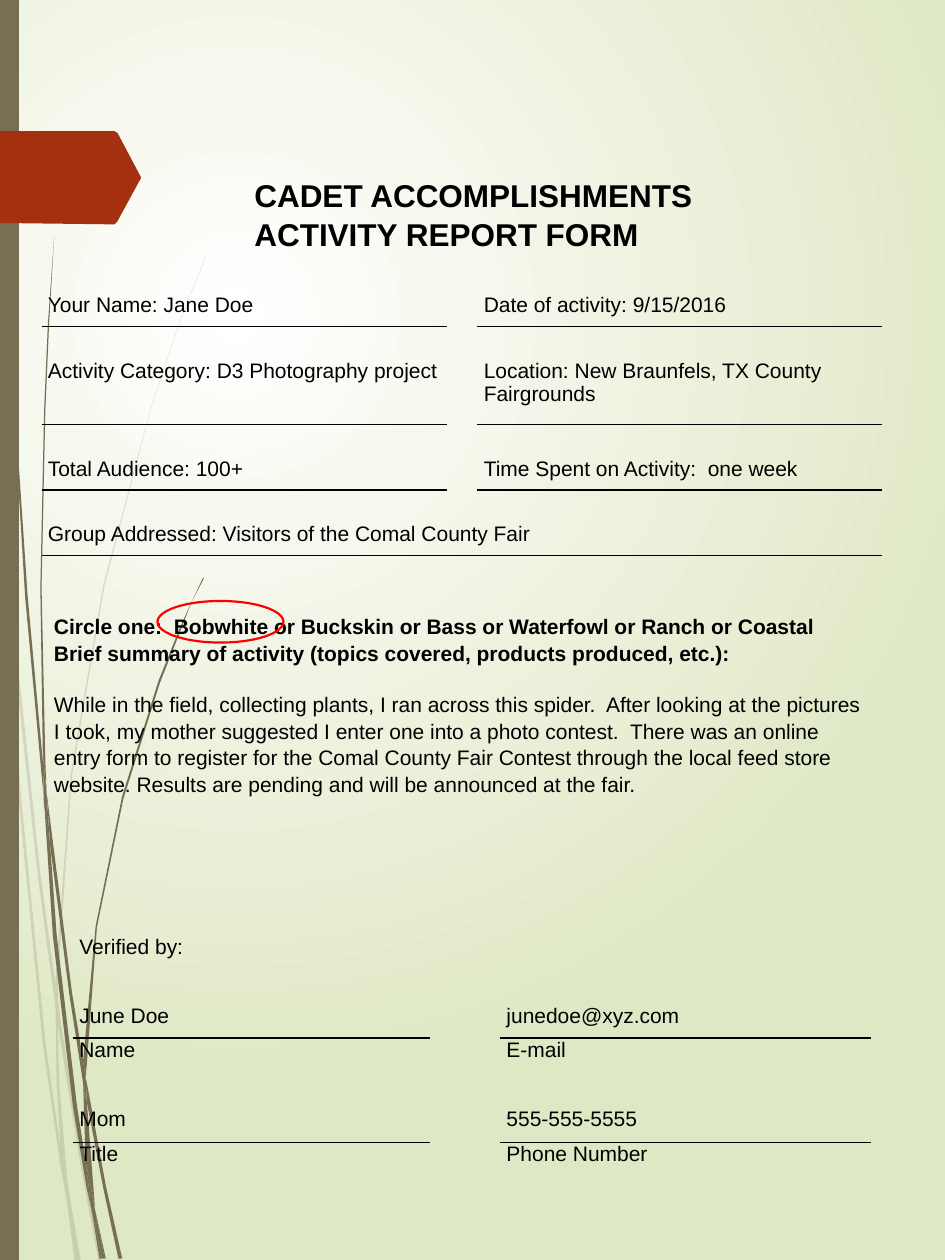
import pptx
import pptx.util
import pptx.dml.color
import pptx.enum.shapes
import pptx.enum.text
import pptx.oxml
import pptx.oxml.ns
from dataclasses import dataclass
from lxml import etree

PX = 9144
NO_STYLE = "{2D5ABB26-0587-4C30-8999-92F81FD0307C}"


@dataclass(frozen=True)
class Theme:
    font: str = "Arial"
    ink: str = "000000"
    stem: str = "766F54"
    tag: str = "A53010"
    ring: str = "FF0000"
    glow: str = "FFFFFF"
    leaf: str = "DFE8C4"
    body: int = 12
    title: int = 18
    spacing: float = 1.05
    rule: float = 1
    ring_line: float = 1.25


FAINT_WISPS = [
    [(6, 467), (4, 429), (0, 375), (0, 399), (5, 459)],
    [(30, 695), (44, 799), (44, 781), (32, 693), (7, 460), (9, 501)],
    [(48, 809), (46, 794), (46, 814), (64, 925), (78, 1000), (81, 1000), (66, 922)],
    [(62, 1000), (64, 1000), (55, 948)],
    [(48, 910), (36, 826), (16, 625), (9, 501), (6, 467), (14, 626), (34, 828),
     (48, 925), (53, 952), (52, 943)],
    [(4, 421), (4, 429), (7, 458), (7, 460), (6, 421), (3, 214), (5, 33), (4, 33), (2, 214)],
    [(44, 799), (45, 861), (48, 911), (50, 923), (55, 948), (54, 942), (47, 861),
     (46, 814), (46, 811)],
    [(46, 778), (57, 616), (83, 465), (119, 327), (140, 264), (151, 234), (163, 205),
     (163, 204), (151, 233), (140, 263), (119, 326), (82, 464), (56, 615), (44, 778),
     (44, 781), (46, 794)],
    [(53, 952), (59, 1000), (62, 1000)],
    [(46, 811), (46, 814), (46, 794), (44, 781), (44, 799)],
    [(50, 923), (48, 911), (52, 943), (53, 952), (62, 1000), (55, 948)],
]
DARK_WISPS = [
    [(4, 147), (10, 310), (20, 474), (35, 636), (35, 642), (34, 610), (34, 604), (22, 473),
     (11, 310), (5, 146), (3, 64), (2, 0), (2, 64)],
    [(55, 789), (66, 860), (66, 845), (66, 842), (57, 787), (37, 629), (40, 673)],
    [(70, 865), (68, 855), (69, 875), (82, 943), (94, 999), (97, 999), (84, 941)],
    [(68, 922), (61, 877), (45, 742), (40, 673), (35, 636), (42, 743), (58, 879),
     (69, 944), (73, 962), (72, 956)],
    [(37, 629), (36, 604), (33, 466), (36, 326), (39, 257), (43, 188), (38, 257),
     (35, 326), (32, 466), (34, 599)],
    [(83, 999), (84, 999), (75, 958)],
    [(35, 637), (40, 674), (37, 630), (34, 599), (34, 605)],
    [(69, 844), (77, 736), (98, 634), (127, 542), (144, 499), (152, 478), (162, 459),
     (161, 459), (152, 478), (143, 498), (126, 540), (97, 632), (76, 735), (66, 842),
     (68, 855)],
    [(73, 962), (79, 999), (81, 999)],
    [(66, 860), (68, 922), (72, 941), (75, 958), (75, 954), (69, 875), (67, 868)],
    [(66, 860), (67, 867), (69, 875), (68, 855), (66, 842), (66, 845)],
    [(72, 941), (68, 922), (72, 956), (73, 962), (81, 999), (83, 999), (75, 958)],
]
TAG = [(111, 143), (93, 176), (92, 177), (91, 178), (84, 178), (0, 177), (0, 104),
       (91, 104), (92, 105), (93, 105), (111, 139), (112, 141)]

ACTIVITY = {
    (0, 0, 1): "Your Name: Jane Doe",
    (0, 3, 4): "Date of activity: 9/15/2016",
    (2, 0, 1): "Activity Category: D3 Photography project",
    (2, 3, 4): "Location: New Braunfels, TX County Fairgrounds",
    (4, 0, 1): "Total Audience: 100+",
    (4, 3, 4): "Time Spent on Activity:  one week",
    (6, 0, 4): "Group Addressed: Visitors of the Comal County Fair",
}
SIGNATURES = {
    (0, 0, 0): "Verified by:",
    (2, 0, 0): "June Doe",
    (2, 2, 2): "junedoe@xyz.com",
    (3, 0, 0): "Name",
    (3, 2, 2): "E-mail",
    (5, 0, 0): "Mom",
    (5, 2, 2): "555-555-5555",
    (6, 0, 0): "Title",
    (6, 2, 2): "Phone Number",
}
SUMMARY = (
    "While in the field, collecting plants, I ran across this spider.  After looking at the "
    "pictures  I took, my mother suggested I enter one into a photo contest.  There was an online "
    "entry form to register for the Comal County Fair Contest through the local feed store "
    "website. Results are pending and will be announced at the fair."
)


def rgb(value):
    return pptx.dml.color.RGBColor.from_string(value)


def child(parent, tag, **attrs):
    return etree.SubElement(parent, pptx.oxml.ns.qn(tag), **attrs)


class Page:
    def __init__(self, s, theme):
        self.s, self.theme = s, theme

    def background(self):
        fill = self.s.background.fill
        fill.gradient()
        for stop, color, at in zip(fill.gradient_stops, (self.theme.glow, self.theme.leaf), (0, 1)):
            stop.color.rgb, stop.position = rgb(color), at
        grad = self.s.element.xpath(".//p:bg//a:gradFill")[0]
        for lin in grad.xpath("a:lin"):
            grad.remove(lin)
        circle = child(grad, "a:path", path="circle")
        child(circle, "a:fillToRect", l="50000", t="50000", r="100000", b="100000")

    def paint(self, sp, color, alpha=None):
        sp.shadow.inherit = False
        sp.fill.solid()
        sp.fill.fore_color.rgb = rgb(color)
        sp.line.fill.background()
        if alpha:
            child(sp.element.xpath("p:spPr/a:solidFill/a:srgbClr")[0], "a:alpha", val=str(alpha * 1000))

    def outline(self, points, color, alpha=None):
        builder = self.s.shapes.build_freeform(*points[0], scale=PX)
        builder.add_line_segments(points[1:], close=True)
        self.paint(builder.convert_to_shape(), color, alpha)

    def bar(self, *box):
        kind = pptx.enum.shapes.MSO_SHAPE.RECTANGLE
        self.paint(self.s.shapes.add_shape(kind, *(v * PX for v in box)), self.theme.stem)

    def ring(self, *box):
        kind = pptx.enum.shapes.MSO_SHAPE.OVAL
        sp = self.s.shapes.add_shape(kind, *(v * PX for v in box))
        sp.shadow.inherit = False
        sp.fill.background()
        sp.line.color.rgb = rgb(self.theme.ring)
        sp.line.width = pptx.util.Pt(self.theme.ring_line)

    def run(self, p, text, size, bold=False):
        r = p.add_run()
        r.text = text
        r.font.name, r.font.size, r.font.bold = self.theme.font, pptx.util.Pt(size), bold
        r.font.color.rgb = rgb(self.theme.ink)

    def text(self, box, lines, size, top=5):
        tf = self.s.shapes.add_textbox(*(v * PX for v in box)).text_frame
        tf.word_wrap = True
        tf.margin_top = top * PX
        for i, (words, bold, gap) in enumerate(lines):
            p = tf.add_paragraph() if i else tf.paragraphs[0]
            p.line_spacing = self.theme.spacing
            p.space_before = pptx.util.Pt(gap)
            self.run(p, words, size, bold)

    def rule_below(self, cell):
        ln = etree.Element(pptx.oxml.ns.qn("a:lnB"), w=str(pptx.util.Pt(self.theme.rule)))
        child(child(ln, "a:solidFill"), "a:srgbClr", val=self.theme.ink)
        cell._tc.get_or_add_tcPr().insert(0, ln)

    def table(self, left, top, cols, rows, entries, ruled):
        box = (left, top, sum(cols), sum(rows))
        frame = self.s.shapes.add_table(len(rows), len(cols), *(v * PX for v in box))
        table = frame.table
        table.first_row = table.horz_banding = False
        table._tbl.tblPr.xpath("a:tableStyleId")[0].text = NO_STYLE
        for tracks, sizes, side in ((table.columns, cols, "width"), (table.rows, rows, "height")):
            for track, size in zip(tracks, sizes):
                setattr(track, side, size * PX)
        for cell in table.iter_cells():
            cell.fill.background()
            cell.margin_left = cell.margin_right = 5 * PX
            cell.margin_top = cell.margin_bottom = 0
            child(cell.text_frame.paragraphs[0]._p, "a:endParaRPr", sz=str(self.theme.body * 100))
        for (row, first, last), words in entries.items():
            if last > first:
                table.cell(row, first).merge(table.cell(row, last))
            self.run(table.cell(row, first).text_frame.paragraphs[0], words, self.theme.body)
            if row in ruled:
                for col in range(first, last + 1):
                    self.rule_below(table.cell(row, col))


def main():
    prs = pptx.Presentation()
    prs.slide_width, prs.slide_height = 750 * PX, 1000 * PX
    theme = Theme()
    page = Page(prs.slides.add_slide(prs.slide_layouts[6]), theme)
    page.background()
    for wisps, alpha in ((FAINT_WISPS, 20), (DARK_WISPS, None)):
        for points in wisps:
            page.outline(points, theme.stem, alpha)
    page.bar(0, 0, 15, 1000)
    page.outline(TAG, theme.tag)

    page.table(33, 233, [173, 149, 24, 196, 125], [26, 26, 52, 26, 26, 26, 26],
               ACTIVITY, {0, 2, 4, 6})
    edges = [round(192 * i / 7) for i in range(8)]
    heights = [b - a for a, b in zip(edges, edges[1:])]
    page.table(58, 742, [283, 56, 294], heights, SIGNATURES, {2, 5})

    page.text((33, 477, 667, 249), [
        ("Circle one:  Bobwhite or Buckskin or Bass or Waterfowl or Ranch or Coastal", True, 0),
        ("Brief summary of activity (topics covered, products produced, etc.):", True, 0),
        (SUMMARY, False, 14.5),
    ], theme.body, top=9)
    page.text((192, 133, 375, 71), [
        ("CADET ACCOMPLISHMENTS", True, 0),
        ("ACTIVITY REPORT FORM", True, 0),
    ], theme.title)
    page.ring(125, 477, 100, 33)
    prs.save("out.pptx")


if __name__ == "__main__":
    main()
